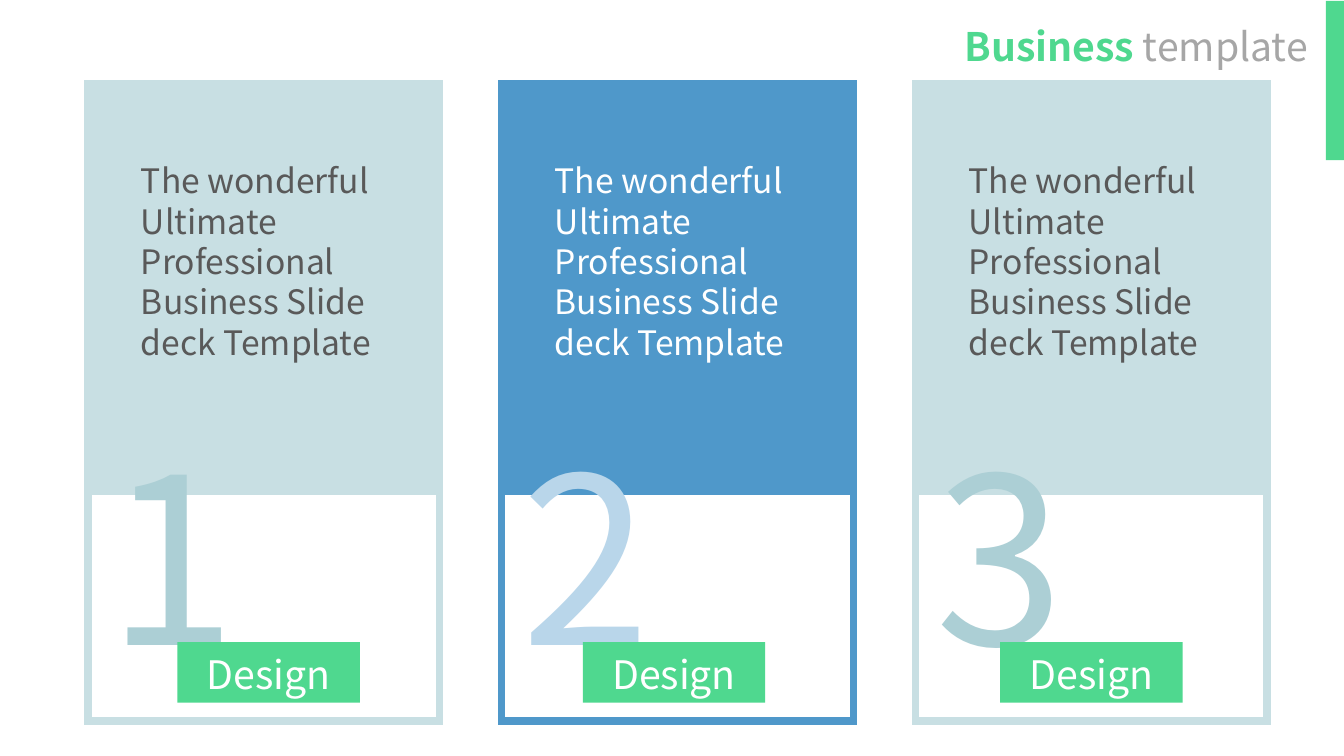
from lxml.etree import SubElement
from pptx import Presentation
from pptx.dml.color import RGBColor
from pptx.enum.shapes import MSO_SHAPE as Shape
from pptx.enum.text import MSO_ANCHOR as Anchor, MSO_AUTO_SIZE as AutoSize, PP_ALIGN as Align
from pptx.oxml.ns import qn
from pptx.util import Inches, Pt

COLORS = {
    "white": "FFFFFF", "green": "4FD88F", "gray": "A6A6A6", "dark": "595959",
    "pale": "C8DFE3", "teal": "ACCFD5", "blue": "4F98CA", "sky": "B9D6EA",
}
FONT = "Noto Sans CJK JP"
WIDTH, HEIGHT = 13.33, 7.5
CARD_LEFT, CARD_PITCH, CARD_WIDTH = 0.87, 4.105, 3.49
MESSAGE = "The wonderful Ultimate Professional Business Slide deck Template"
# number, card colour, number colour, message colour, left of the label
CARDS = [
    ("1", "pale", "teal", "dark", 1.76),
    ("2", "blue", "sky", "white", 5.78),
    ("3", "pale", "teal", "dark", 9.92),
]


def color(name):
    return RGBColor.from_string(COLORS[name])


def write(box, *spans, size, align=Align.LEFT, wrap=True, top=0.05):
    """Fill a box with one paragraph of (text, colour, bold) spans."""
    frame = box.text_frame
    frame.word_wrap = wrap
    frame.auto_size = AutoSize.NONE
    frame.vertical_anchor = Anchor.TOP
    frame.margin_top = Inches(top)
    para = frame.paragraphs[0]
    para.alignment = align
    for text, tint, bold in spans:
        span = para.add_run()
        span.text = text
        span.font.name = FONT
        span.font.size = Pt(size)
        span.font.bold = bold
        span.font.color.rgb = color(tint)


class CardSlide:
    def __init__(self, deck):
        deck.slide_width, deck.slide_height = Inches(WIDTH), Inches(HEIGHT)
        self.shapes = deck.slides.add_slide(deck.slide_layouts[6]).shapes

    def column(self, index, offset=0):
        """Left edge of a card column, plus an offset inside the card."""
        return CARD_LEFT + index * CARD_PITCH + offset

    def panel(self, left, top, width, height, fill, line=None):
        box = self.shapes.add_shape(Shape.RECTANGLE, *map(Inches, (left, top, width, height)))
        box.shadow.inherit = False
        box.fill.solid()
        box.fill.fore_color.rgb = color(fill)
        if line:
            box.line.color.rgb = color(line)
            box.line.width = Pt(5.5)
            outline = box.element.spPr.find(qn("a:ln"))
            SubElement(outline, qn("a:miter"), lim="800000")
        else:
            box.line.fill.background()
        return box

    def text(self, left, top, width, height, *spans, **style):
        box = self.shapes.add_textbox(*map(Inches, (left, top, width, height)))
        write(box, *spans, **style)

    def card(self, index, number, tone, number_tone, message_tone):
        left = self.column(index)
        self.panel(left, 0.83, CARD_WIDTH, 4.02, tone, tone)
        self.panel(left, 4.87, CARD_WIDTH, 2.28, "white", tone)
        self.text(self.column(index, 0.1), 4.05, 1.65, 2.89,
                  (number, number_tone, False), size=166, wrap=False)
        self.text(self.column(index, 0.43), 1.54, 2.64, 2.52,
                  (MESSAGE, message_tone, False), size=24)

    def label(self, left):
        box = self.panel(left, 6.37, 1.81, 0.6, "green")
        write(box, ("Design", "white", False), size=28, align=Align.CENTER, top=0.08)

    def heading(self):
        self.text(9.21, 0.17, 3.86, 0.57, ("Business ", "green", True),
                  ("template", "gray", False), size=28, align=Align.RIGHT, wrap=False)
        self.panel(13.15, 0.01, 0.18, 1.58, "green")


def main():
    deck = Presentation()
    slide = CardSlide(deck)
    for index, (number, tone, number_tone, message_tone, label_left) in enumerate(CARDS):
        slide.card(index, number, tone, number_tone, message_tone)
        slide.label(label_left)
    slide.heading()
    deck.save("out.pptx")


if __name__ == "__main__":
    main()
